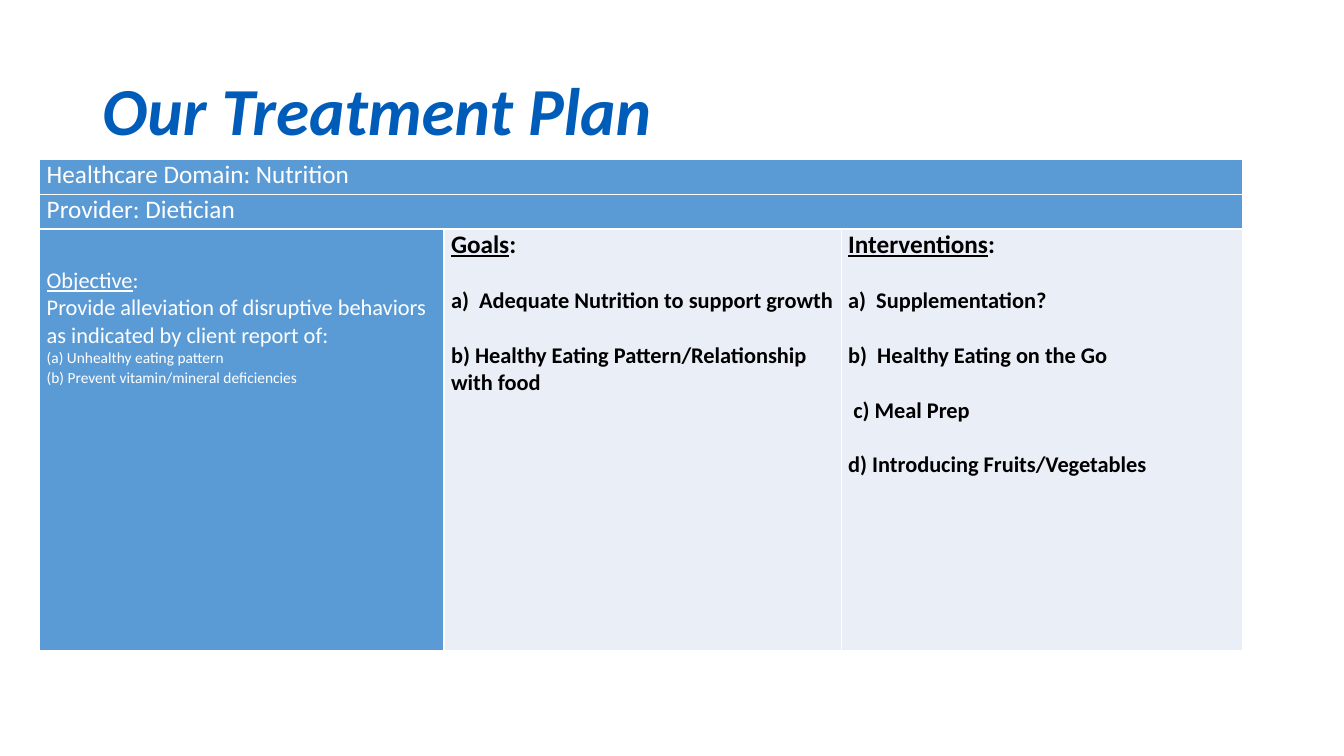
from lxml import etree
from pptx import Presentation
from pptx.dml.color import RGBColor
from pptx.enum import text
from pptx.oxml import ns
from pptx.util import Pt

FONT = "Calibri"
BLUE, PALE, WHITE, BLACK = "5B9BD5", "EAEFF7", "FFFFFF", "000000"
COLUMN_WIDTHS = (288.8, 283.7, 286.5)
ROW_HEIGHTS = (25, 25, 301)
GAP = 19.5

# Each line: text, size, space before. A heading is underlined up to its colon.
OBJECTIVE = [
    ("Objective:", 16, 0),
    ("Provide alleviation of disruptive behaviors as indicated by client report of:", 16, 0),
    ("(a) Unhealthy eating pattern", 11, 0),
    ("(b) Prevent vitamin/mineral deficiencies", 11, 0),
]
GOALS = [
    ("Goals:", 18, 0),
    ("a)  Adequate Nutrition to support growth", 16, GAP),
    ("b) Healthy Eating Pattern/Relationship with food", 16, GAP),
]
INTERVENTIONS = [
    ("Interventions:", 18, 0),
    ("a)  Supplementation?", 16, GAP),
    ("b)  Healthy Eating on the Go", 16, GAP),
    (" c) Meal Prep", 16, GAP),
    ("d) Introducing Fruits/Vegetables", 16, GAP),
]


def colour(value):
    return RGBColor.from_string(value)


def style_span(span, size, ink, bold=False, italic=False, underline=False):
    font = span.font
    font.name, font.size = FONT, Pt(size)
    font.bold, font.italic, font.underline = bold, italic, underline
    font.color.rgb = colour(ink)


def add_title(page, wording):
    title = page.shapes.title
    title.left, title.top, title.width, title.height = Pt(66), Pt(28.8), Pt(828), Pt(104.4)
    frame = title.text_frame
    frame.text = wording
    frame.auto_size = text.MSO_AUTO_SIZE.NONE
    frame.vertical_anchor = text.MSO_ANCHOR.MIDDLE
    para = frame.paragraphs[0]
    para.alignment = text.PP_ALIGN.LEFT
    para.line_spacing = 0.9
    style_span(para.runs[0], 48, "005CB9", bold=True, italic=True)


def set_borders(cell, bottom_width):
    properties = cell._tc.get_or_add_tcPr()
    widths = {"lnL": 1, "lnR": 1, "lnT": 1, "lnB": bottom_width}
    for index, (side, width) in enumerate(widths.items()):
        line = etree.Element(ns.qn(f"a:{side}"), w=str(Pt(width)))
        fill = etree.SubElement(line, ns.qn("a:solidFill"))
        etree.SubElement(fill, ns.qn("a:srgbClr"), val=WHITE)
        properties.insert(index, line)


def format_cell(cell, fill, bottom_width=1):
    cell.fill.solid()
    cell.fill.fore_color.rgb = colour(fill)
    cell.margin_left = cell.margin_right = Pt(5)
    cell.margin_top = cell.margin_bottom = 0
    set_borders(cell, bottom_width)


def write_lines(cell, lines, ink, bold=False):
    frame = cell.text_frame
    for index, (wording, size, gap) in enumerate(lines):
        para = frame.add_paragraph() if index else frame.paragraphs[0]
        para.space_before = Pt(gap)
        is_heading = index == 0 and wording.endswith(":")
        for part in (wording[:-1], ":") if is_heading else (wording,):
            span = para.add_run()
            span.text = part
            style_span(span, size, ink, bold, underline=is_heading and part != ":")


def add_plan_table(page):
    frame = page.shapes.add_table(3, 3, Pt(28.4), Pt(113.8),
                                  Pt(sum(COLUMN_WIDTHS)), Pt(sum(ROW_HEIGHTS)))
    table = frame.table
    table.first_row = table.horz_banding = False
    for column, width in zip(table.columns, COLUMN_WIDTHS):
        column.width = Pt(width)
    for row, height in zip(table.rows, ROW_HEIGHTS):
        row.height = Pt(height)

    for row, wording in enumerate(("Healthcare Domain: Nutrition", "Provider: Dietician")):
        for column in range(3):
            format_cell(table.cell(row, column), BLUE, bottom_width=1 + row)
        table.cell(row, 0).merge(table.cell(row, 2))
        write_lines(table.cell(row, 0), [(wording, 18, 0)], WHITE)

    details = ((OBJECTIVE, BLUE, WHITE), (GOALS, PALE, BLACK), (INTERVENTIONS, PALE, BLACK))
    for column, (lines, fill, ink) in enumerate(details):
        cell = table.cell(2, column)
        format_cell(cell, fill)
        write_lines(cell, lines, ink, bold=ink == BLACK)
    table.cell(2, 0).margin_top = Pt(27)


def main():
    deck = Presentation()
    deck.slide_width, deck.slide_height = Pt(960), Pt(540)
    page = deck.slides.add_slide(deck.slide_layouts[5])
    add_title(page, "Our Treatment Plan")
    add_plan_table(page)
    deck.save("out.pptx")


if __name__ == "__main__":
    main()
